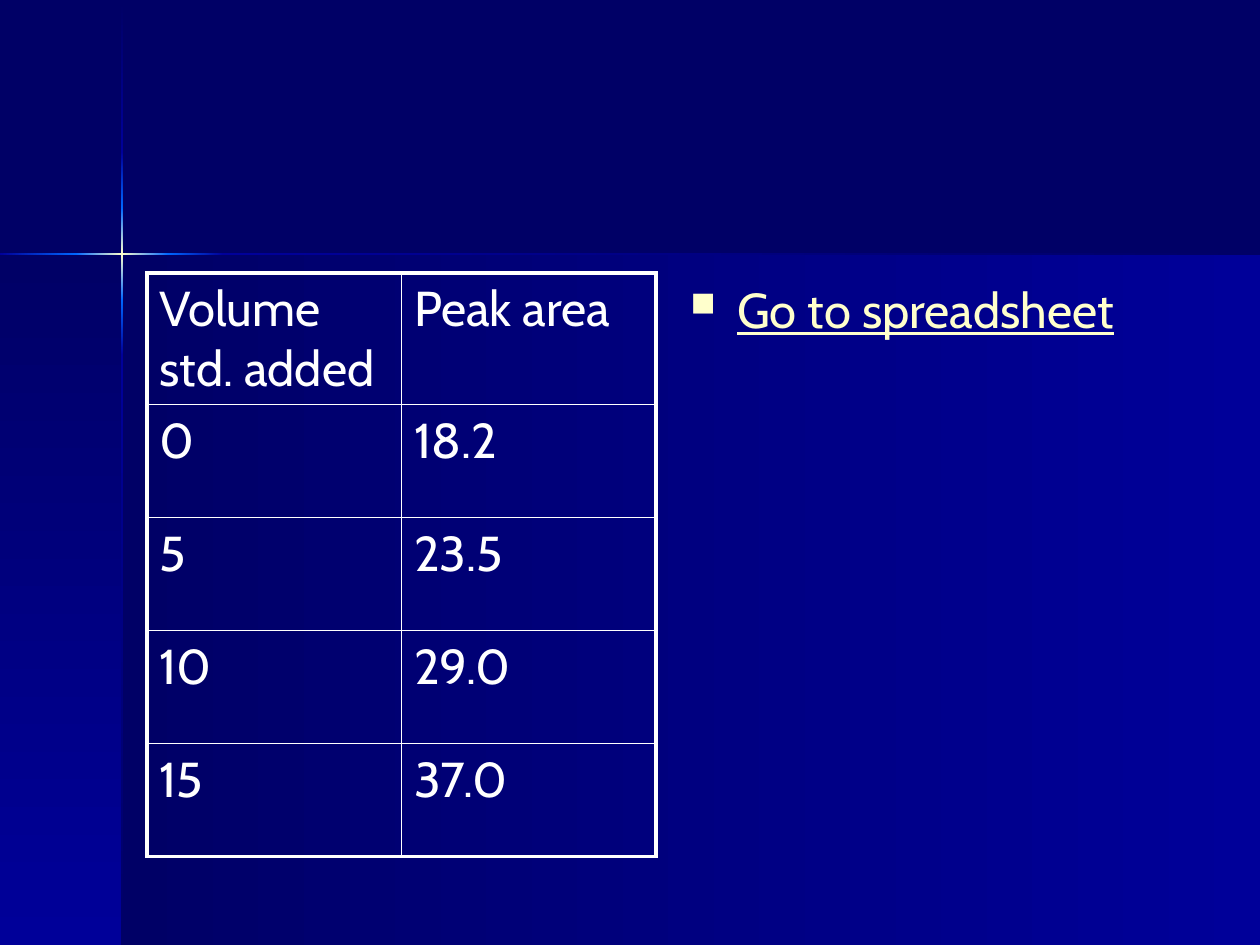
"""Build a slide with a table of standard additions and a pointer to a spreadsheet."""
from copy import deepcopy

from lxml import etree
from pptx import Presentation
from pptx.dml.color import RGBColor
from pptx.enum.shapes import MSO_SHAPE
from pptx.oxml.ns import qn
from pptx.util import Emu, Pt

RECTANGLE = MSO_SHAPE.RECTANGLE
PX = 914400 // 126
WIDTH, HEIGHT = 1260, 945
COLORS = {"night": "000066", "navy": "000099", "blue": "0066FF",
          "glow": "FFFFCC", "white": "FFFFFF"}
FONT = {"name": "Cabin", "size": Pt(28)}
ACROSS, DOWN = 0, 270

ROWS = [("Volume std. added", "Peak area"), ("0", "18.2"), ("5", "23.5"),
        ("10", "29.0"), ("15", "37.0")]
POINTER = "Go to spreadsheet"
TABLE_BOX = (147, 273, 509, 583)
POINTER_BOX = (678, 273, 509, 567)
ROW_HEIGHT = 113
INDENT = 47
OUTER, INNER = Pt(2.25), Pt(1)

PANELS = [((122, 255, 1138, 690), ("night", "navy"), ACROSS),
          ((0, 255, 122, 690), ("night", "navy"), DOWN)]
BEAM_X, BEAM_Y, BEAM = 121, 253, 2
VERTICAL_BEAM = [(1, 152, ("night", "navy")), (355, 945, ("navy", "night")),
                 (300, 355, ("blue", "navy")), (152, 208, ("navy", "blue")),
                 (208, 300, ("blue", "glow", "blue"))]
HORIZONTAL_BEAM = [(223, 1260, ("navy", "night")), (0, 76, ("navy", "blue")),
                   (168, 223, ("blue", "navy")),
                   (76, 168, ("blue", "glow", "blue"))]


def px(*lengths):
    return [Emu(length * PX) for length in lengths]


def rgb(color):
    return RGBColor.from_string(COLORS[color])


def add_gradient(slide, box, colors, angle):
    band = slide.shapes.add_shape(RECTANGLE, *px(*box))
    band.shadow.inherit = False
    band.line.fill.background()
    band.fill.gradient()
    band.fill.gradient_angle = angle
    stop_list = band._element.spPr.find(".//" + qn("a:gsLst"))
    for _ in colors[2:]:
        stop_list.append(deepcopy(stop_list[0]))
    for place, (stop, color) in enumerate(zip(band.fill.gradient_stops, colors)):
        stop.position = place / (len(colors) - 1)
        stop.color.rgb = rgb(color)


def write(frame, text, color, **extra):
    paragraph = frame.paragraphs[0]
    paragraph.space_before = Pt(5.6)
    run = paragraph.add_run()
    run.text = text
    for name, value in {**FONT, **extra}.items():
        setattr(run.font, name, value)
    run.font.color.rgb = rgb(color)
    return paragraph


def add_borders(cell, widths):
    properties = cell._tc.get_or_add_tcPr()
    for side, width in widths.items():
        line = etree.SubElement(properties, qn("a:ln" + side), w=str(width))
        fill = etree.SubElement(line, qn("a:solidFill"))
        etree.SubElement(fill, qn("a:srgbClr"), val=COLORS["white"])


def add_results(slide):
    last_row, last_column = len(ROWS) - 1, len(ROWS[0]) - 1
    table = slide.shapes.add_table(len(ROWS), len(ROWS[0]), *px(*TABLE_BOX)).table
    table.first_row = table.horz_banding = False
    for r, values in enumerate(ROWS):
        table.rows[r].height = Emu(ROW_HEIGHT * PX)
        for c, value in enumerate(values):
            cell = table.cell(r, c)
            edges = {"L": c == 0, "R": c == last_column,
                     "T": r == 0, "B": r == last_row}
            add_borders(cell, {side: OUTER if edge else INNER
                               for side, edge in edges.items()})
            cell.fill.background()
            write(cell.text_frame, value, "white")


def add_pointer(slide):
    frame = slide.shapes.add_textbox(*px(*POINTER_BOX)).text_frame
    frame.word_wrap = True
    paragraph = write(frame, POINTER, "glow", underline=True)
    properties = paragraph._p.get_or_add_pPr()
    properties.set("marL", str(INDENT * PX))
    properties.set("indent", str(-INDENT * PX))
    bullet_color = etree.SubElement(properties, qn("a:buClr"))
    etree.SubElement(bullet_color, qn("a:srgbClr"), val=COLORS["glow"])
    etree.SubElement(properties, qn("a:buSzPct"), val="70000")
    etree.SubElement(properties, qn("a:buChar"), char="■")


def main():
    deck = Presentation()
    deck.slide_width, deck.slide_height = px(WIDTH, HEIGHT)
    slide = deck.slides.add_slide(deck.slide_layouts[6])
    slide.background.fill.solid()
    slide.background.fill.fore_color.rgb = rgb("night")
    for panel in PANELS:
        add_gradient(slide, *panel)
    for top, bottom, colors in VERTICAL_BEAM:
        add_gradient(slide, (BEAM_X, top, BEAM, bottom - top), colors, DOWN)
    for left, right, colors in HORIZONTAL_BEAM:
        add_gradient(slide, (left, BEAM_Y, right - left, BEAM), colors, ACROSS)
    add_results(slide)
    add_pointer(slide)
    deck.save("out.pptx")


if __name__ == "__main__":
    main()
